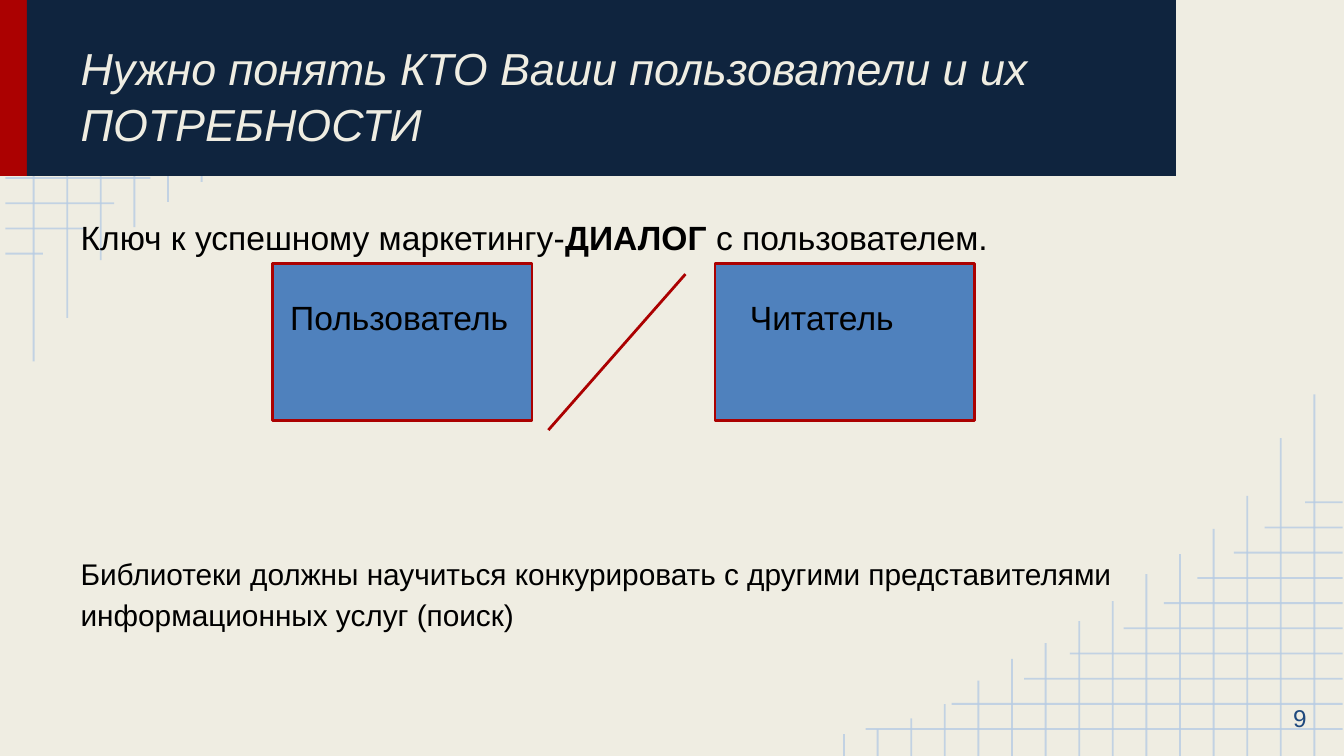
from lxml.etree import SubElement
from pptx import Presentation
from pptx.dml.color import RGBColor
from pptx.enum.shapes import MSO_CONNECTOR as Connector, MSO_SHAPE as Shape
from pptx.enum.text import MSO_ANCHOR as Anchor, MSO_AUTO_SIZE as AutoSize, PP_ALIGN as Align
from pptx.oxml.ns import qn
from pptx.util import Inches, Pt

COLORS = {name: RGBColor.from_string(value) for name, value in {
    "paper": "EFEDE2", "lattice": "B7CCE4", "red": "AB0101", "navy": "0F243E",
    "blue": "4F81BD", "number": "1F497D", "text": "000000",
}.items()}
FONT = "Arial"
COLUMNS, ROWS = 40, 22.5

deck = Presentation()
deck.slide_width = Inches(10)
deck.slide_height = Inches(10) * 9 // 16
cell = deck.slide_width / COLUMNS
slide = deck.slides.add_slide(deck.slide_layouts[1])
slide.background.fill.solid()
slide.background.fill.fore_color.rgb = COLORS["paper"]
shapes = slide.shapes


def grid(*cells):
    return [round(value * cell) for value in cells]


def add_line(start, end, color, width):
    line = shapes.add_connector(Connector.STRAIGHT, *grid(*start, *end))
    line.line.color.rgb = COLORS[color]
    line.line.width = Pt(width)
    SubElement(line._element.spPr, qn("a:effectLst"))
    return line


HEADER_BOTTOM = 5.24
row_ends = [14.36, 11.8, 9.64, 8.28, 6.68, 5.48, 4.48, 3.4, 2.48, 1.28]
column_ends = [10.76, 9.46, 7.74, 6.76, 6.01, 5.41, 4.61, 4.01, 3.36, 2.89, 2.24, 1.54, 1.12, 0.79, 0.65]
lattice = [((0.16, 0.8 + 0.75 * i), (end, 0.8 + 0.75 * i)) for i, end in enumerate(row_ends)]
lattice += [((1 + i, 0), (1 + i, end)) for i, end in enumerate(column_ends)]

top_left = [((x1, max(y1, HEADER_BOTTOM)), (x2, y2))
            for (x1, y1), (x2, y2) in lattice if y2 > HEADER_BOTTOM]
bottom_right = [((40.12 - x1, ROWS - y1), (40.12 - x2, ROWS - y2))
                for (x1, y1), (x2, y2) in lattice]
for start, end in top_left + bottom_right:
    strand = add_line(start, end, "lattice", 1)
    tint = strand._element.spPr.find(".//" + qn("a:srgbClr"))
    SubElement(tint, qn("a:alpha"), val="78000")

for left, width, color in [(0, 0.8, "red"), (0.8, 34.2, "navy")]:
    band = shapes.add_shape(Shape.RECTANGLE, *grid(left, 0, width, HEADER_BOTTOM))
    band.shadow.inherit = False
    band.fill.solid()
    band.fill.fore_color.rgb = COLORS[color]
    band.line.fill.background()

title, body = shapes.title, slide.placeholders[1]
page_number = shapes.add_textbox(*grid(36.88, 20.24, 2.4, 2.26))
title.text_frame.text = "Нужно понять КТО Ваши пользователи и их ПОТРЕБНОСТИ"
page_number.text_frame.text = "9"

dialogue = body.text_frame.paragraphs[0]
for words, bold in [("Ключ к успешному маркетингу-", False), ("ДИАЛОГ", True),
                    (" с пользователем.", False)]:
    run = dialogue.add_run()
    run.text = words
    run.font.bold = bold
competition = body.text_frame.add_paragraph()
competition.text = ("Библиотеки должны научиться конкурировать с другими "
                    "представителями информационных услуг (поиск)")

for holder, place in [(title, (2, 0.44, 33.24, 4.44)), (body, (2, 5.6, 36, 15.88))]:
    shapes.element.append(holder.element)
    holder.left, holder.top, holder.width, holder.height = grid(*place)

audience = []
for label, left, indent in [("Пользователь", 8.12, 0.52), ("Читатель", 21.28, 1.04)]:
    card = shapes.add_shape(Shape.RECTANGLE, *grid(left, 7.84, 7.72, 4.68))
    card.shadow.inherit = False
    card.fill.solid()
    card.fill.fore_color.rgb = COLORS["blue"]
    card.line.color.rgb = COLORS["red"]
    card.line.width = Pt(1.5)
    card.text_frame.text = label
    audience.append((card, Anchor.TOP, indent, 1))

add_line((20.4, 8.16), (16.32, 12.8), "red", 1.5)

framed = [(title, Anchor.BOTTOM, 0.4, 0.4), (body, Anchor.TOP, 0.4, 0.4),
          (page_number, Anchor.MIDDLE, 0.4, 0.4)] + audience
for holder, anchor, left, top in framed:
    frame = holder.text_frame
    frame.auto_size = AutoSize.NONE
    frame.word_wrap = True
    frame.vertical_anchor = anchor
    frame.margin_left, frame.margin_top, frame.margin_right, frame.margin_bottom = grid(left, top, 0.4, 0.4)

styles = [(title.text_frame.paragraphs[0], 24, "paper", Align.LEFT, 1.05, 0),
          (dialogue, 18, "text", Align.LEFT, 1.38, 0),
          (competition, 16, "text", Align.LEFT, 1.15, 157),
          (page_number.text_frame.paragraphs[0], 13, "number", Align.RIGHT, 1, 0)]
styles += [(card.text_frame.paragraphs[0], 18, "text", Align.LEFT, 1, 0) for card, *_ in audience]
for paragraph, size, color, align, spacing, before in styles:
    paragraph.font.name = FONT
    paragraph.font.size = Pt(size)
    paragraph.font.color.rgb = COLORS[color]
    paragraph.alignment = align
    paragraph.line_spacing = spacing
    paragraph.space_before = Pt(before)
title.text_frame.paragraphs[0].font.italic = True

for paragraph in (dialogue, competition):
    properties = paragraph._p.get_or_add_pPr()
    properties.set("marL", "0")
    properties.set("indent", "0")
    bullet = SubElement(properties, qn("a:buNone"))
    properties.find(qn("a:defRPr")).addprevious(bullet)

deck.save("out.pptx")
